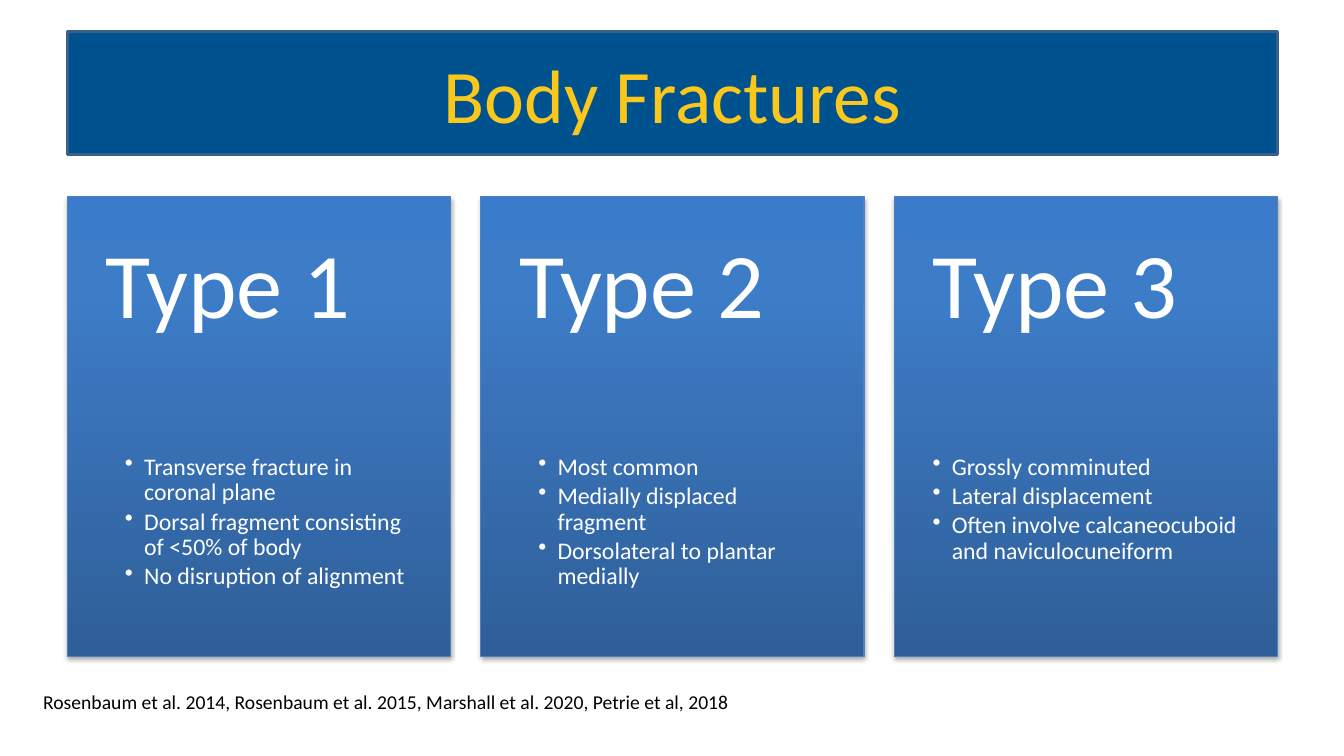
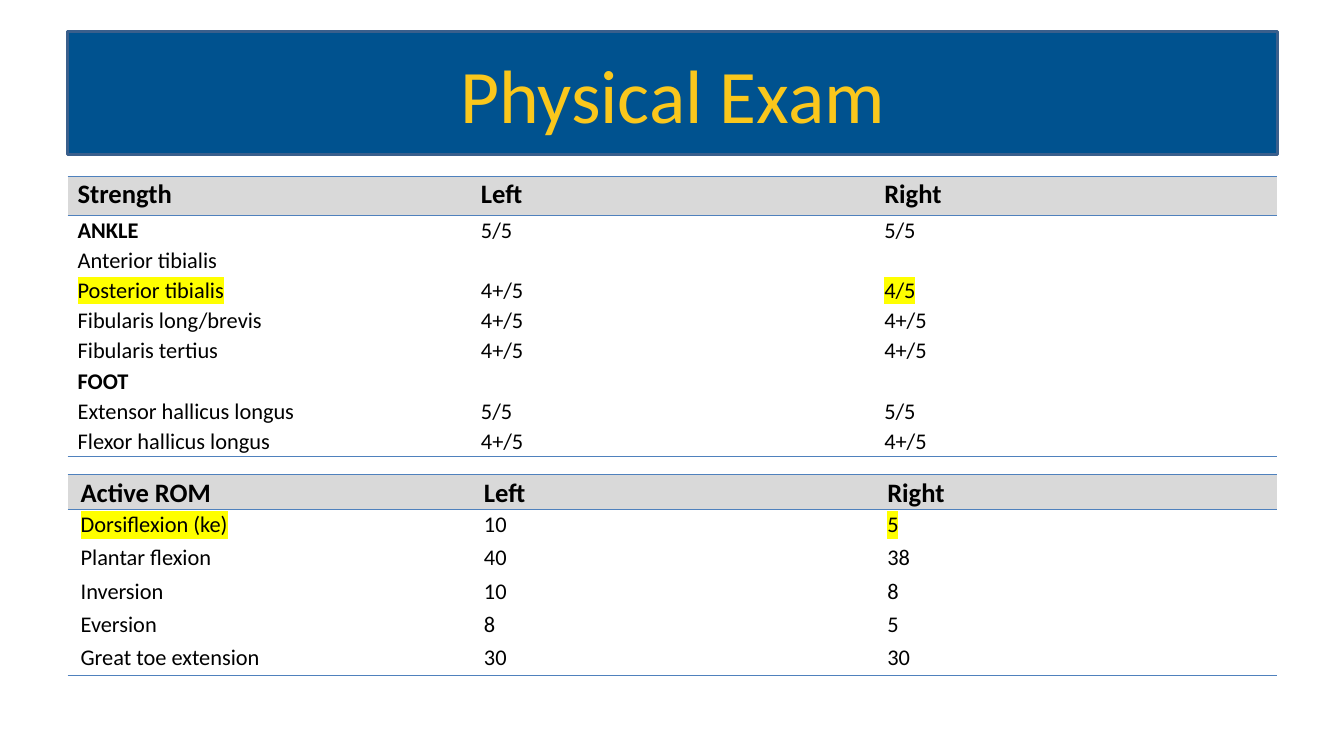
import copy
import dataclasses

import pptx
import pptx.dml.color
import pptx.enum.shapes
import pptx.enum.text
import pptx.oxml
import pptx.oxml.ns
import pptx.util

Inches = pptx.util.Inches
Pt = pptx.util.Pt
qn = pptx.oxml.ns.qn
RGB = pptx.dml.color.RGBColor.from_string
ANCHOR = pptx.enum.text.MSO_ANCHOR
RECTANGLE = pptx.enum.shapes.MSO_SHAPE.RECTANGLE
NAMESPACE = pptx.oxml.ns.nsdecls("a")


@dataclasses.dataclass(frozen=True)
class Theme:
    font: str = "Calibri"
    band: str = "00528F"
    band_line: str = "3A5F8C"
    title: str = "FAC71C"
    text: str = "000000"
    card_text: str = "FFFFFF"
    card_stops: tuple = ((0, "2F5F99"), (0.8, "3D7CC7"), (1, "3A7CCB"))
    rule: str = "4F81BD"
    header: str = "D9D9D9"
    highlight: str = "FFFF00"
    title_size: float = 54
    card_title_size: float = 66
    bullet_size: float = 17
    header_size: float = 19
    cell_size: float = 16
    reference_size: float = 14


THEME = Theme()
SLIDE_WIDTH, SLIDE_HEIGHT = 13.33, 7.5
MARGIN = 0.67
CONTENT_WIDTH = 12
COLUMNS = 3
GAP = 0.3
CARD_WIDTH = (CONTENT_WIDTH - (COLUMNS - 1) * GAP) / COLUMNS
CARD_TOP, CARD_HEIGHT = 1.95, 4.56
CARD_TITLE_HEIGHT = 0.4 * CARD_HEIGHT
BULLETS_TOP = 4.51
CARD_INSET = 0.38
BULLET_INDENT = 0.19
NO_GRID_STYLE = "{2D5ABB26-0587-4C30-8999-92F81FD0307C}"

CARDS = [
    ("Type 1", 2, ["Transverse fracture in coronal plane",
                   "Dorsal fragment consisting of <50% of body",
                   "No disruption of alignment"]),
    ("Type 2", 2, ["Most common",
                   "Medially displaced fragment",
                   "Dorsolateral to plantar medially"]),
    ("Type 3", 1, ["Grossly comminuted",
                   "Lateral displacement",
                   "Often involve calcaneocuboid and naviculocuneiform"]),
]
REFERENCES = ("Rosenbaum et al. 2014, Rosenbaum et al. 2015, "
              "Marshall et al. 2020, Petrie et al, 2018")
STRENGTH = [
    ("Strength", "Left", "Right"),
    ("ANKLE\nAnterior tibialis", "5/5", "5/5"),
    ("Posterior tibialis", "4+/5", "4/5"),
    ("Fibularis long/brevis", "4+/5", "4+/5"),
    ("Fibularis tertius", "4+/5", "4+/5"),
    ("FOOT", "", ""),
    ("Extensor hallicus longus", "5/5", "5/5"),
    ("Flexor hallicus longus", "4+/5", "4+/5"),
]
ACTIVE_MOTION = [
    ("Active ROM", "Left", "Right"),
    ("Dorsiflexion (ke)", "10", "5"),
    ("Plantar flexion", "40", "38"),
    ("Inversion", "10", "8"),
    ("Eversion", "8", "5"),
    ("Great toe extension", "30", "30"),
]
SECTION_NAMES = {"ANKLE", "FOOT"}


def format_runs(paragraph, size, color, bold=False):
    for run in paragraph.runs:
        run.font.name = THEME.font
        run.font.size = Pt(size)
        run.font.bold = bold
        run.font.color.rgb = RGB(color)


def add_text(slide, box, text, size, color, insets=(0.1, 0.05, 0.1, 0.05),
             anchor=ANCHOR.TOP, line_spacing=1.0):
    shape = slide.shapes.add_textbox(*map(Inches, box))
    frame = shape.text_frame
    frame.word_wrap = True
    frame.vertical_anchor = anchor
    (frame.margin_left, frame.margin_top,
     frame.margin_right, frame.margin_bottom) = map(Inches, insets)
    frame.text = text
    for paragraph in frame.paragraphs:
        paragraph.line_spacing = line_spacing
        format_runs(paragraph, size, color)
    return frame


def add_rectangle(slide, box, line_color, line_width):
    shape = slide.shapes.add_shape(RECTANGLE, *map(Inches, box))
    shape.shadow.inherit = False
    shape.line.color.rgb = RGB(line_color)
    shape.line.width = Pt(line_width)
    return shape


def add_band_to_layout(slide):
    band = add_rectangle(slide, (MARGIN, 0.31, CONTENT_WIDTH, 1.22),
                         THEME.band_line, 2)
    band.fill.solid()
    band.fill.fore_color.rgb = RGB(THEME.band)
    slide.slide_layout.shapes.element.insert(2, band.element)


def add_titled_slide(presentation, text):
    slide = presentation.slides.add_slide(presentation.slide_layouts[5])
    title = slide.shapes.title
    title.left, title.top = Inches(MARGIN), Inches(0.3)
    title.width, title.height = Inches(CONTENT_WIDTH), Inches(1.25)
    frame = title.text_frame
    frame.text = text
    frame.auto_size = pptx.enum.text.MSO_AUTO_SIZE.NONE
    frame.vertical_anchor = ANCHOR.MIDDLE
    frame.paragraphs[0].alignment = pptx.enum.text.PP_ALIGN.CENTER
    format_runs(frame.paragraphs[0], THEME.title_size, THEME.title)
    return slide


def fill_card_gradient(shape):
    shape.fill.gradient()
    shape.fill.gradient_angle = 90
    stop_list = shape.element.find(".//" + qn("a:gsLst"))
    stop_list.append(copy.deepcopy(stop_list[-1]))
    for stop, (position, color) in zip(shape.fill.gradient_stops, THEME.card_stops):
        stop.position = position
        stop.color.rgb = RGB(color)


def add_soft_shadow(shape):
    effects = shape.element.find(".//" + qn("a:effectLst"))
    effects.append(pptx.oxml.parse_xml(
        f'<a:outerShdw {NAMESPACE} blurRad="{Pt(3.1)}" dist="{Pt(1.8)}" '
        'dir="5400000" rotWithShape="0"><a:srgbClr val="000000">'
        '<a:alpha val="35000"/></a:srgbClr></a:outerShdw>'))


def set_bullet(paragraph, level):
    properties = paragraph._p.get_or_add_pPr()
    properties.set("marL", str(Inches(level * BULLET_INDENT)))
    properties.set("indent", str(-Inches(BULLET_INDENT)))
    properties.append(pptx.oxml.parse_xml(f'<a:buChar {NAMESPACE} char="•"/>'))


def add_card(slide, column, heading, level, bullets):
    left = MARGIN + column * (CARD_WIDTH + GAP)
    card = add_rectangle(slide, (left, CARD_TOP, CARD_WIDTH, CARD_HEIGHT),
                         THEME.rule, 0.75)
    fill_card_gradient(card)
    add_soft_shadow(card)
    add_text(slide, (left, CARD_TOP, CARD_WIDTH, CARD_TITLE_HEIGHT), heading,
             THEME.card_title_size, THEME.card_text,
             (CARD_INSET, 0.18, CARD_INSET, 0.18), ANCHOR.MIDDLE, 0.9)
    bullets_height = CARD_TOP + CARD_HEIGHT - BULLETS_TOP
    frame = add_text(slide, (left, BULLETS_TOP, CARD_WIDTH, bullets_height),
                     "\n".join(bullets), THEME.bullet_size, THEME.card_text,
                     (CARD_INSET, 0, CARD_INSET, 0.36), line_spacing=0.9)
    for paragraph in frame.paragraphs:
        paragraph.space_after = Pt(2.5)
        set_bullet(paragraph, level)


def highlight_runs(paragraph):
    for run in paragraph.runs:
        latin = run._r.rPr.find(qn("a:latin"))
        latin.addprevious(pptx.oxml.parse_xml(
            f'<a:highlight {NAMESPACE}><a:srgbClr val="{THEME.highlight}"/>'
            '</a:highlight>'))


def set_borders(cell, edges):
    properties = cell._tc.get_or_add_tcPr()
    for index, edge in enumerate(edges):
        properties.insert(index, pptx.oxml.parse_xml(
            f'<a:ln{edge} {NAMESPACE} w="{Pt(1)}"><a:solidFill>'
            f'<a:srgbClr val="{THEME.rule}"/></a:solidFill></a:ln{edge}>'))


def format_cell(cell, text, inset, is_header, is_highlighted):
    cell.margin_left = cell.margin_right = Inches(inset)
    cell.margin_top = cell.margin_bottom = 0
    if is_header:
        cell.fill.solid()
        cell.fill.fore_color.rgb = RGB(THEME.header)
    else:
        cell.fill.background()
    cell.text_frame.text = text
    size = THEME.header_size if is_header else THEME.cell_size
    for paragraph in cell.text_frame.paragraphs:
        paragraph.line_spacing = 1.07
        bold = is_header or paragraph.text in SECTION_NAMES
        format_runs(paragraph, size, THEME.text, bold)
        if is_highlighted:
            highlight_runs(paragraph)
        if not paragraph.text:
            paragraph._p.append(pptx.oxml.parse_xml(
                f'<a:endParaRPr {NAMESPACE} sz="{int(size * 100)}"/>'))


def add_exam_table(slide, top, rows, heights, inset, highlighted):
    frame = slide.shapes.add_table(
        len(rows), COLUMNS, Inches(MARGIN), Inches(top),
        Inches(CONTENT_WIDTH), Inches(sum(heights)))
    table = frame.table
    table.first_row = table.horz_banding = False
    frame.element.find(".//" + qn("a:tableStyleId")).text = NO_GRID_STYLE
    for row_index, (row, height) in enumerate(zip(rows, heights)):
        table.rows[row_index].height = Inches(height)
        for column, text in enumerate(row):
            cell = table.cell(row_index, column)
            format_cell(cell, text, inset, row_index == 0,
                        (row_index, column) in highlighted)
            if row_index == 0:
                set_borders(cell, "TB")
            elif row_index == len(rows) - 1:
                set_borders(cell, "B")


def build_fractures(presentation):
    slide = add_titled_slide(presentation, "Body Fractures")
    add_band_to_layout(slide)
    for column, card in enumerate(CARDS):
        add_card(slide, column, *card)
    add_text(slide, (0.33, 6.8, 9.17, 0.34), REFERENCES,
             THEME.reference_size, THEME.text)


def build_exam(presentation):
    slide = add_titled_slide(presentation, "Physical Exam")
    add_exam_table(slide, 1.75, STRENGTH, [0.39, 0.59] + [0.3] * 6, 0.1,
                   {(2, 0), (2, 2)})
    add_exam_table(slide, 4.71, ACTIVE_MOTION, [0.33] * 6, 0.13,
                   {(1, 0), (1, 2)})


def main():
    presentation = pptx.Presentation()
    presentation.slide_width = Inches(SLIDE_WIDTH)
    presentation.slide_height = Inches(SLIDE_HEIGHT)
    build_fractures(presentation)
    build_exam(presentation)
    presentation.save("out.pptx")


if __name__ == "__main__":
    main()
